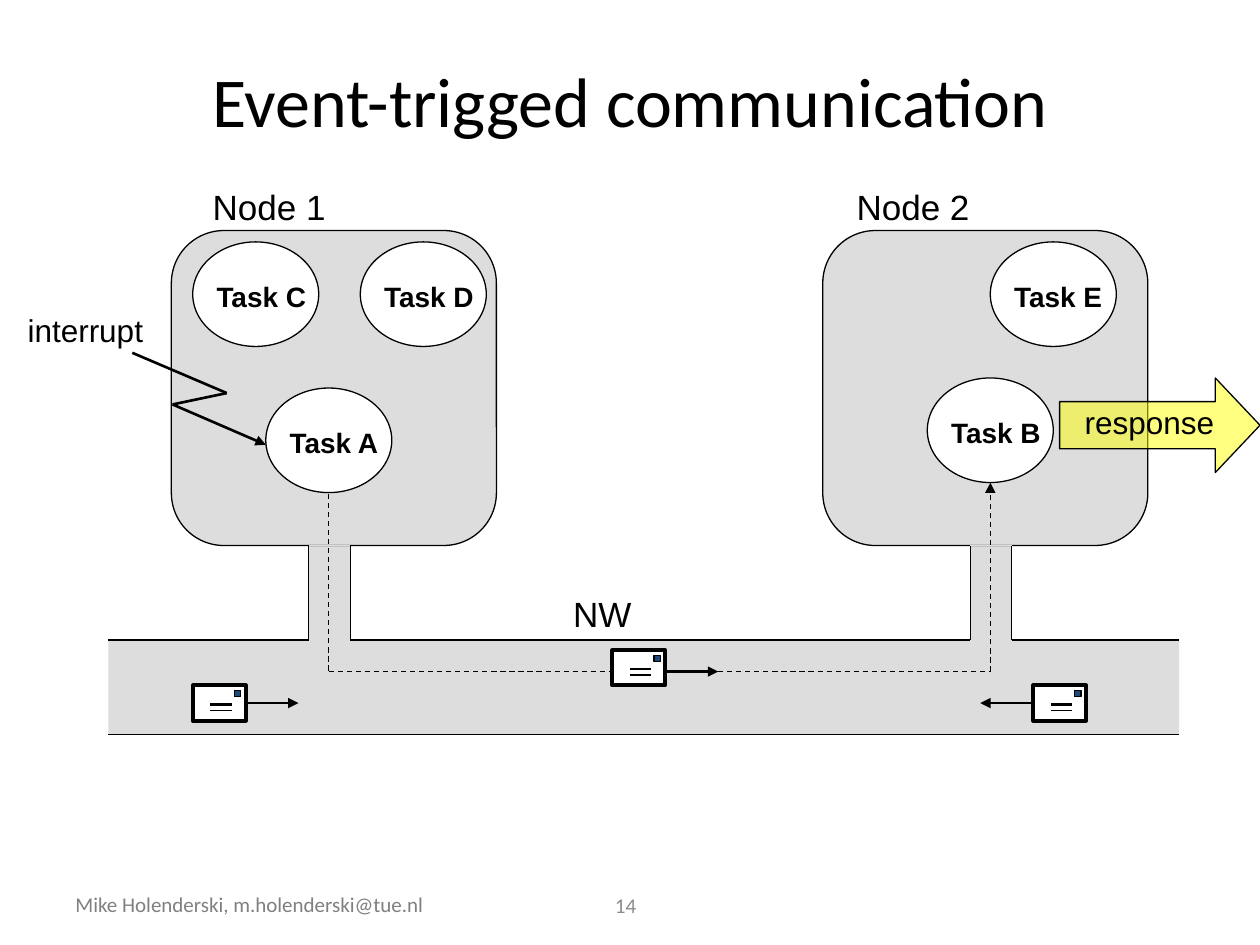
import pptx
import pptx.util
import pptx.dml.color
import pptx.enum.dml
import pptx.enum.shapes
import pptx.enum.text
import pptx.oxml
import pptx.oxml.ns
from lxml import etree

Inches = pptx.util.Inches
Pt = pptx.util.Pt
RGBColor = pptx.dml.color.RGBColor
SHAPE = pptx.enum.shapes.MSO_SHAPE
ALIGN = pptx.enum.text.PP_ALIGN
ANCHOR = pptx.enum.text.MSO_ANCHOR
qn = pptx.oxml.ns.qn

BLACK = RGBColor(0x00, 0x00, 0x00)
WHITE = RGBColor(0xFF, 0xFF, 0xFF)
GRAY = RGBColor(0xDD, 0xDD, 0xDD)
NAVY = RGBColor(0x1F, 0x49, 0x7D)
YELLOW = RGBColor(0xFF, 0xFF, 0x00)
FOOTER = RGBColor(0x80, 0x80, 0x80)
NUMBER = RGBColor(0x8C, 0x8C, 0x8C)

NODE_W, NODE_H = 2.58, 2.5
TASK_W, TASK_H = 1, 0.83
STUB_W = 0.33
BUS_X, BUS_Y, BUS_W, BUS_H = 0.86, 5.08, 8.5, 0.75
NODE_Y = 1.83
STUB_Y = NODE_Y + NODE_H
STUB_XS = (2.45, 7.7)
ROUTE_Y = 5.33
ENV_W, ENV_H = 0.42, 0.28
ARROW_LEN = 0.42


def add_box(s, kind, x, y, w, h, fill, line=None):
    """Filled shape; line is its outline width in points."""
    sp = s.shapes.add_shape(kind, Inches(x), Inches(y), Inches(w), Inches(h))
    sp.shadow.inherit = False
    sp.fill.solid()
    sp.fill.fore_color.rgb = fill
    if line is None:
        sp.line.fill.background()
    else:
        sp.line.color.rgb = BLACK
        sp.line.width = Pt(line)
    return sp


def add_line(s, x1, y1, x2, y2, width=0.75, color=BLACK, dash=False, arrow=False):
    c = s.shapes.add_connector(pptx.enum.shapes.MSO_CONNECTOR.STRAIGHT,
                               Inches(x1), Inches(y1), Inches(x2), Inches(y2))
    c.line.color.rgb = color
    c.line.width = Pt(width)
    if dash:
        c.line.dash_style = pptx.enum.dml.MSO_LINE.DASH
    if arrow:
        etree.SubElement(c.line._get_or_add_ln(), qn("a:tailEnd"), type="triangle")
    etree.SubElement(c._element.spPr, qn("a:effectLst"))
    return c


def format_text(tf, text, size, font="Arial", color=BLACK, bold=False, align=ALIGN.LEFT):
    tf.text = text
    p = tf.paragraphs[0]
    p.alignment = align
    r = p.runs[0]
    r.font.name = font
    r.font.size = Pt(size)
    r.font.bold = bold
    r.font.color.rgb = color


def add_text(s, text, x, y, w, h, size, wrap=True, **style):
    tf = s.shapes.add_textbox(Inches(x), Inches(y), Inches(w), Inches(h)).text_frame
    tf.word_wrap = wrap
    format_text(tf, text, size, **style)
    return tf


def add_title(s, x, y, w, h):
    sp = s.shapes.title
    sp.left, sp.top, sp.width, sp.height = (Inches(v) for v in (x, y, w, h))
    sp.text_frame.vertical_anchor = ANCHOR.MIDDLE
    format_text(sp.text_frame, "Event-trigged communication", 40, "Calibri",
                align=ALIGN.CENTER)


def add_network_fill(s, x, y, w, h):
    for stub_x in STUB_XS:
        add_box(s, SHAPE.RECTANGLE, stub_x, STUB_Y, STUB_W, y - STUB_Y, GRAY)
    add_box(s, SHAPE.RECTANGLE, x, y, w, h, GRAY)


def add_network_outline(s, x, y, w, h):
    # Stub walls, with the opening into each node
    for left in STUB_XS:
        right = left + STUB_W
        add_line(s, left, STUB_Y, left, y)
        add_line(s, right, STUB_Y, right, y)
        add_line(s, left, STUB_Y, right, STUB_Y, color=GRAY)
    # Top edge between the stubs, then the unbroken bottom edge
    edges = [x] + [e for left in STUB_XS for e in (left, left + STUB_W)] + [x + w]
    for start, end in zip(edges[::2], edges[1::2]):
        add_line(s, start, y, end, y)
    add_line(s, x, y + h, x + w, y + h)
    add_text(s, "NW", 4.45, y - 0.43, 2, 0.43, 20)


def add_node(s, name, x, y, label_dx, tasks):
    sp = add_box(s, SHAPE.ROUNDED_RECTANGLE, x, y, NODE_W, NODE_H, GRAY, 0.75)
    sp.adjustments[0] = 0.167
    add_text(s, name, x + label_dx, y - 0.41, 1.1, 0.43, 20, wrap=False)
    for task, dx, dy in tasks:
        add_box(s, SHAPE.OVAL, x + dx, y + dy, TASK_W, TASK_H, WHITE, 0.75)
        add_text(s, task, x + dx + 0.09, y + dy + 0.25, 1.25, 0.37, 16, bold=True)


def add_envelope(s, x, y):
    body = add_box(s, SHAPE.RECTANGLE, x, y, ENV_W, ENV_H, WHITE, 2.25)
    add_box(s, SHAPE.RECTANGLE, x + 0.33, y + 0.04, 0.05, 0.05, NAVY, 0.75)
    for dy, width in ((0.15, 1.5), (0.2, 1)):
        add_line(s, x + 0.14, y + dy, x + 0.31, y + dy, width)
    return body


def add_message(s, x, y, to_right):
    """Envelope with an arrow leaving the middle of one side."""
    body = add_envelope(s, x, y)
    start = x + ENV_W if to_right else x
    end = start + (ARROW_LEN if to_right else -ARROW_LEN)
    mid = y + ENV_H / 2
    c = add_line(s, start, mid, end, mid, 1.5, arrow=True)
    c.begin_connect(body, 3 if to_right else 1)


def add_route(s, x1, y1, x2, y2):
    """Dashed path from task A to task B, with its message on the way."""
    env_x = 4.86
    env_right = env_x + ENV_W
    arrow_end = env_right + ARROW_LEN
    add_line(s, x1, y1, x1, ROUTE_Y, dash=True)
    add_line(s, x1, ROUTE_Y, env_x, ROUTE_Y, dash=True)
    add_line(s, arrow_end, ROUTE_Y, x2, ROUTE_Y, dash=True)
    add_line(s, x2, ROUTE_Y, x2, y2, dash=True, arrow=True)
    add_line(s, env_right, ROUTE_Y, arrow_end, ROUTE_Y, 1.5, arrow=True)
    add_envelope(s, env_x, 5.16)


def add_interrupt(s, x, y):
    add_text(s, "interrupt", x, y, 2.15, 0.4, 18)
    bolt = [(0.93, 0.38), (1.68, 0.7), (1.25, 0.79), (1.99, 1.11)]
    for i, ((x1, y1), (x2, y2)) in enumerate(zip(bolt, bolt[1:])):
        add_line(s, x + x1, y + y1, x + x2, y + y2, 1.5, arrow=i == 2)


def add_response(s, x, y, w, h):
    sp = add_box(s, SHAPE.RIGHT_ARROW, x, y, w, h, YELLOW, 0.75)
    sp.adjustments[0], sp.adjustments[1] = 0.5, 0.472
    color = sp._element.spPr.find(qn("a:solidFill")).find(qn("a:srgbClr"))
    etree.SubElement(color, qn("a:alpha"), val="50000")
    add_text(s, "response", x + 0.1, y + 0.15, 1.37, 0.4, 18)


def add_footer(s, y, h):
    add_text(s, "Mike Holenderski, m.holenderski@tue.nl", 0.5, y, 3.92, h, 12,
             font="Calibri", color=FOOTER)
    tf = add_text(s, "14", 4.42, y, 1.09, h, 12, font="Calibri", color=NUMBER,
                  align=ALIGN.CENTER)
    tf.vertical_anchor = ANCHOR.MIDDLE


def main():
    prs = pptx.Presentation()
    prs.slide_width, prs.slide_height = Inches(10), Inches(7.5)
    s = prs.slides.add_slide(prs.slide_layouts[5])
    add_title(s, 0.5, 0.3, 9, 0.98)
    add_network_fill(s, BUS_X, BUS_Y, BUS_W, BUS_H)
    add_node(s, "Node 1", 1.36, NODE_Y, 0.23,
             [("Task A", 0.75, 1.25), ("Task C", 0.17, 0.09), ("Task D", 1.5, 0.09)])
    add_node(s, "Node 2", 6.53, NODE_Y, 0.17,
             [("Task B", 0.83, 1.17), ("Task E", 1.33, 0.09)])
    add_network_outline(s, BUS_X, BUS_Y, BUS_W, BUS_H)
    add_route(s, 2.61, 3.92, 7.86, 3.83)
    add_message(s, 1.53, 5.44, to_right=True)
    add_message(s, 8.2, 5.44, to_right=False)
    add_interrupt(s, 0.12, 2.42)
    add_response(s, 8.41, 3, 1.59, 0.75)
    add_footer(s, 7.03, 0.3)
    prs.save("out.pptx")


if __name__ == "__main__":
    main()
